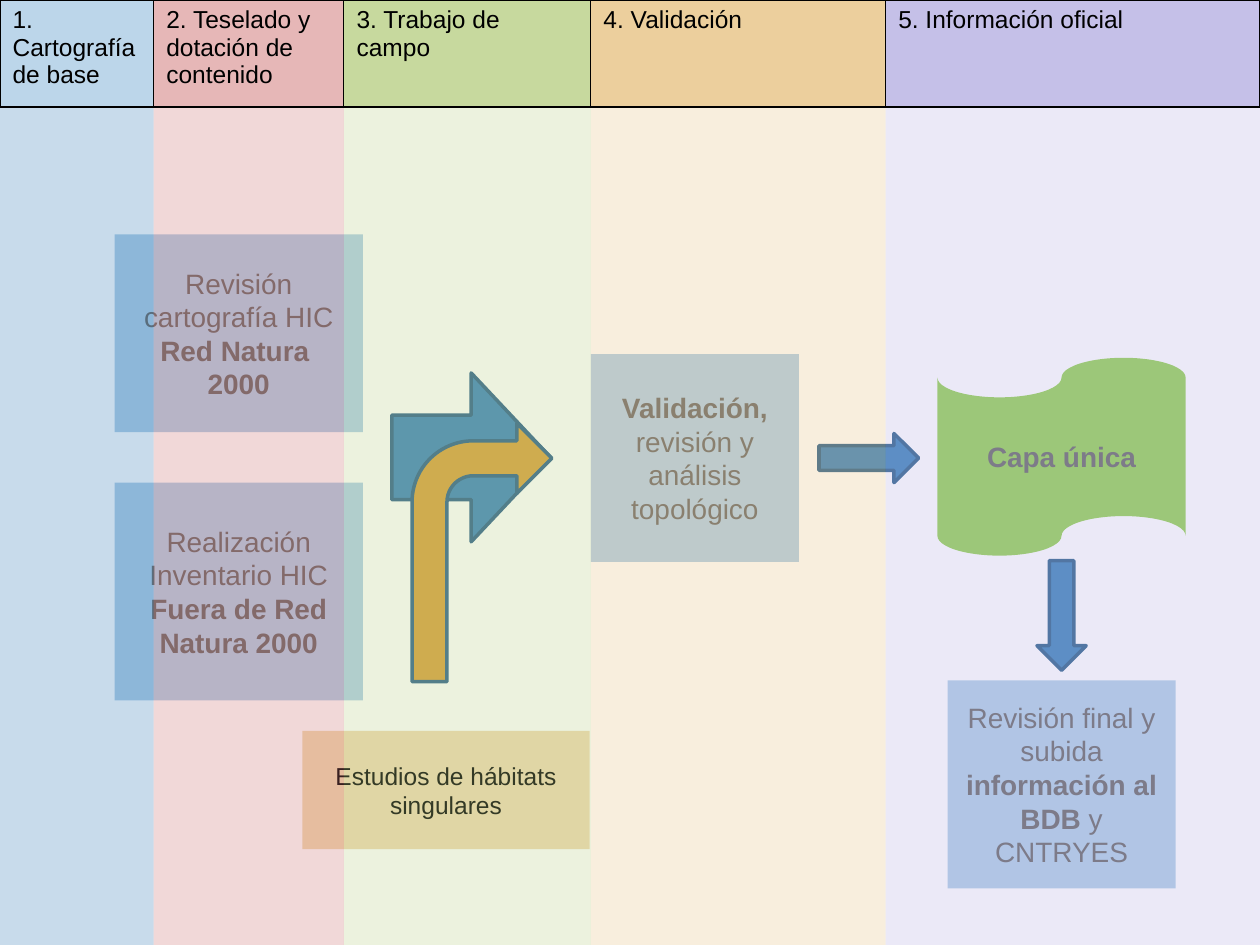
"""Build a slide showing the five phases of a habitat mapping workflow."""
import pptx
import pptx.util
import pptx.dml.color
import pptx.enum.shapes
import pptx.enum.text
import pptx.oxml
import pptx.oxml.ns

Inches = pptx.util.Inches
Pt = pptx.util.Pt
SHAPES = pptx.enum.shapes.MSO_SHAPE
FONT = "Arial"
COLORS = {
    "black": "000000", "gray": "666666", "blue": "3A81BA", "light_blue": "AECDE6",
    "dark_blue": "2B5F8A", "red": "D07576", "olive": "BBD189", "sand": "E8C588",
    "lilac": "B9B3E4", "cream": "EFD9B0", "gold": "D89F39", "green": "92D050",
}
PHASES = [
    ("1. Cartografía de base", 1.22, "light_blue", 82, "blue"),
    ("2. Teselado y dotación de contenido", 1.51, "red", 52, "red"),
    ("3. Trabajo de campo", 1.96, "olive", 82, "olive"),
    ("4. Validación", 2.34, "sand", 82, "sand"),
    ("5. Información oficial", 2.97, "lilac", 82, "lilac"),
]


def rgb(name):
    """Return the named colour."""
    return pptx.dml.color.RGBColor.from_string(COLORS[name])


def format_run(run, size, color, bold=None):
    """Set the font of a run."""
    run.font.name, run.font.size, run.font.bold = FONT, Pt(size), bold
    run.font.color.rgb = rgb(color)


def add_block(slide, kind, box, fill):
    """Add a filled shape without outline or shadow."""
    shape = slide.shapes.add_shape(kind, *(Inches(value) for value in box))
    shape.shadow.inherit = False
    shape.fill.solid()
    shape.fill.fore_color.rgb = rgb(fill)
    shape.line.fill.background()
    return shape


def add_step(slide, box, paragraphs, fill="light_blue", kind=SHAPES.RECTANGLE,
             size=16, color="gray"):
    """Add a step whose paragraphs are lists of (text, bold) runs."""
    frame = add_block(slide, kind, box, fill).text_frame
    frame.word_wrap = True
    frame.vertical_anchor = pptx.enum.text.MSO_ANCHOR.MIDDLE
    frame.margin_top = frame.margin_bottom = Inches(0.1)
    for index, runs in enumerate(paragraphs):
        paragraph = frame.add_paragraph() if index else frame.paragraphs[0]
        paragraph.alignment = pptx.enum.text.PP_ALIGN.CENTER
        for text, bold in runs:
            run = paragraph.add_run()
            run.text = text
            format_run(run, size, color, bold)


def add_arrow(slide, kind, box, fill="blue", rotation=0):
    """Add an outlined block arrow."""
    arrow = add_block(slide, kind, box, fill)
    arrow.line.color.rgb = rgb("dark_blue")
    arrow.line.width = Pt(2)
    arrow.rotation = rotation


def add_mapping(slide, left, top):
    """Add the mapping and field work steps with their arrows."""
    add_step(slide, (left, top + 1.97, 1.97, 1.73),
             [[("Realización Inventario HIC ", False), ("Fuera de Red Natura 2000", True)]])
    add_step(slide, (left, top, 1.97, 1.57),
             [[("Revisión cartografía HIC ", False), ("Red Natura ", True)], [("2000", True)]])
    add_step(slide, (left + 1.49, top + 3.94, 2.28, 0.94),
             [[("Estudios de hábitats singulares", False)]], "cream", size=14, color="black")
    add_arrow(slide, SHAPES.DOWN_ARROW, (left + 2.16, top + 1.14, 1.34, 1.26), rotation=270)
    add_arrow(slide, SHAPES.BENT_ARROW, (left + 2.36, top + 1.5, 1.11, 2.05), "gold")


def add_validation(slide, left, top):
    """Add the validation step and the arrow that leaves it."""
    add_step(slide, (left, top, 1.65, 1.65),
             [[("Validación, ", True), ("revisión y análisis topológico", False)]])
    add_arrow(slide, SHAPES.RIGHT_ARROW, (left + 1.81, top + 0.63, 0.79, 0.39))


def add_publication(slide, left, top):
    """Add the single layer, its arrow and the final upload."""
    add_step(slide, (left, top, 1.97, 1.57), [[("Capa única", True)]],
             "green", SHAPES.FLOWCHART_PUNCHED_TAPE)
    add_step(slide, (left + 0.08, top + 2.56, 1.81, 1.65),
             [[("Revisión final y subida ", False), ("información al BDB ", True),
               ("y CNTRYES", False)]])
    add_arrow(slide, SHAPES.RIGHT_ARROW, (left + 0.55, top + 1.85, 0.87, 0.39), rotation=90)


def format_cell(cell, fill, opacity, borders):
    """Give a cell a translucent fill and borders keyed by side, in points."""
    cell.fill.solid()
    cell.fill.fore_color.rgb = rgb(fill)
    properties = cell._tc.get_or_add_tcPr()
    color = properties.find(".//" + pptx.oxml.ns.qn("a:srgbClr"))
    namespace = pptx.oxml.ns.nsdecls("a")
    color.append(pptx.oxml.parse_xml(f'<a:alpha {namespace} val="{opacity * 1000}"/>'))
    for index, side in enumerate("LRTB"):
        width = borders.get(side)
        paint = (f'<a:solidFill><a:srgbClr val="{COLORS["black"]}"/></a:solidFill>'
                 if width else "<a:noFill/>")
        properties.insert(index, pptx.oxml.parse_xml(
            f'<a:ln{side} {namespace} w="{Pt(width or 0)}">{paint}</a:ln{side}>'))


def add_phases(slide, left, top, width, height):
    """Add the table of translucent phase columns."""
    box = (Inches(value) for value in (left, top, width, height))
    table = slide.shapes.add_table(2, len(PHASES), *box).table
    table.first_row = table.horz_banding = False
    table.rows[0].height = Inches(0.85)
    table.rows[1].height = Inches(height - 0.85)
    for index, (text, column_width, head_fill, opacity, body_fill) in enumerate(PHASES):
        table.columns[index].width = Inches(column_width)
        head = table.cell(0, index)
        head.text_frame.text = text
        format_run(head.text_frame.paragraphs[0].runs[0], 14, "black")
        format_cell(head, head_fill, opacity, {"L": 0.75, "R": 0.75, "T": 0.75, "B": 1})
        format_cell(table.cell(1, index), body_fill, 28, {"T": 1})


def main():
    """Build and save the presentation."""
    presentation = pptx.Presentation()
    presentation.slide_width, presentation.slide_height = Inches(10), Inches(7.5)
    slide = presentation.slides.add_slide(presentation.slide_layouts[6])
    add_mapping(slide, 0.91, 1.86)
    add_publication(slide, 7.44, 2.84)
    add_validation(slide, 4.69, 2.81)
    add_phases(slide, 0, 0, 10, 7.5)
    presentation.save("out.pptx")


if __name__ == "__main__":
    main()
